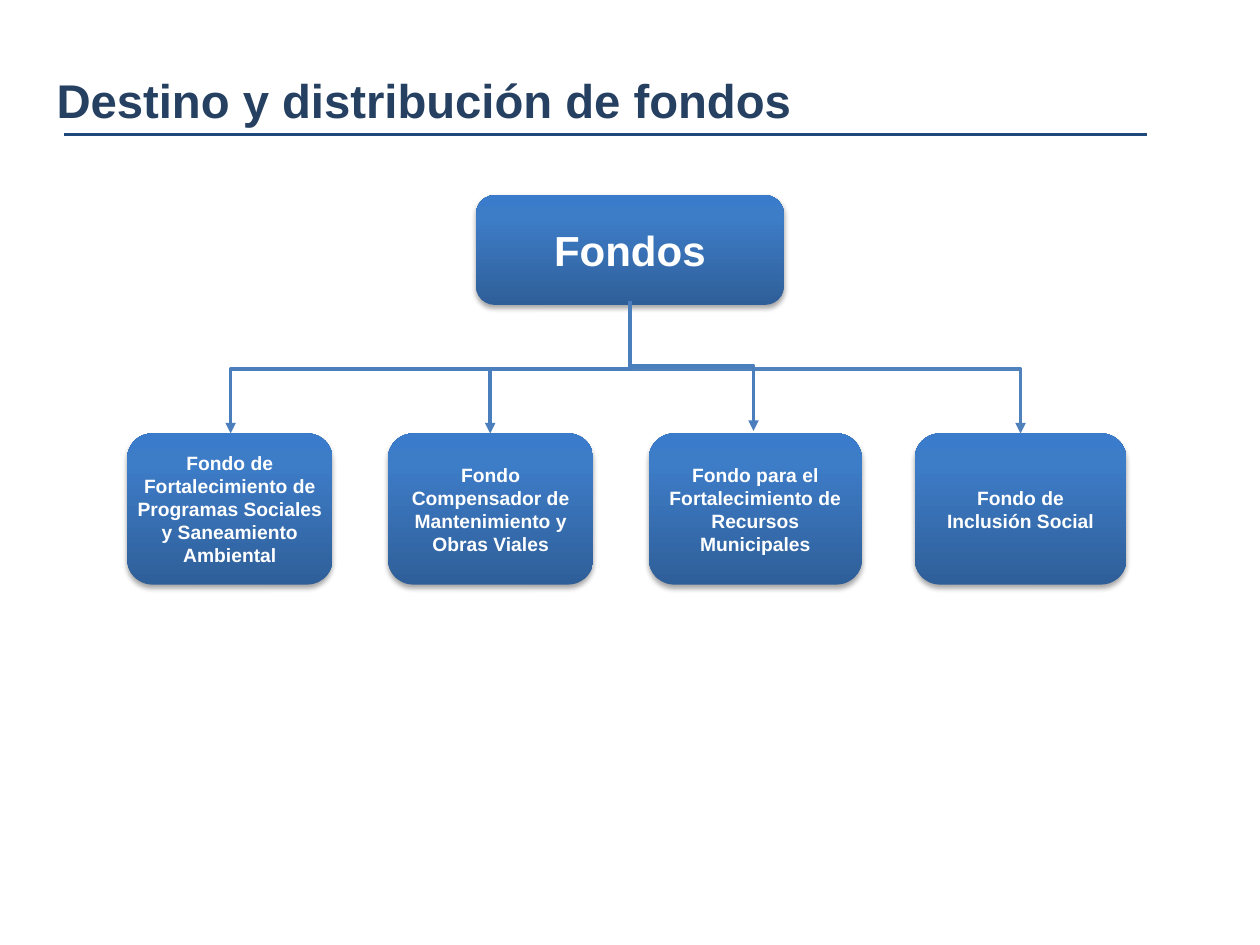
from lxml import etree
from pptx import Presentation
from pptx.dml.color import RGBColor
from pptx.enum.shapes import MSO_CONNECTOR as Link, MSO_SHAPE as Shape
from pptx.enum.text import MSO_ANCHOR as Anchor, MSO_AUTO_SIZE as AutoSize, PP_ALIGN as Align
from pptx.oxml import parse_xml
from pptx.oxml.ns import nsdecls, qn
from pptx.util import Inches, Pt

NAVY, RULE, WHITE = "254061", "1F497D", "FFFFFF"
ARROW, ARROW_LIGHT = "4B7EBC", "4F81BD"
GRADIENT = [(0, "2F5F99"), (80, "3D7CC7"), (100, "3A7CCB")]

ROOT = (3.78, 1.55, 2.44, 0.87)
FUND_TOP, FUND_HEIGHT = 3.44, 1.2
# Text, left, width, side inset
FUNDS = [
    ("Fondo de Fortalecimiento de Programas Sociales y Saneamiento Ambiental", 1.01, 1.63, 0),
    ("Fondo Compensador de Mantenimiento y Obras Viales", 3.08, 1.63, 0.1),
    ("Fondo para el Fortalecimiento de Recursos Municipales", 5.15, 1.69, 0.1),
    ("Fondo de Inclusión Social", 7.26, 1.68, 0.1),
]
# Arrow ends (x, y), start y, colour
ARROWS = [
    (8.1, 3.44, 2.42, ARROW_LIGHT),
    (3.89, 3.44, 2.42, ARROW),
    (5.98, 3.42, 2.39, ARROW),
    (1.83, 3.44, 2.42, ARROW),
]


def color(value):
    return RGBColor.from_string(value)


def write(shape, text, size, fill, align=Align.LEFT, anchor=Anchor.TOP, inset=(0.1, 0.05)):
    frame = shape.text_frame
    frame.word_wrap = True
    frame.vertical_anchor = anchor
    frame.margin_left = frame.margin_right = Inches(inset[0])
    frame.margin_top = frame.margin_bottom = Inches(inset[1])
    para = frame.paragraphs[0]
    para.alignment = align
    span = para.add_run()
    span.text = text
    span.font.name, span.font.size, span.font.bold = "Arial", Pt(size), True
    span.font.color.rgb = color(fill)
    return frame


def add_line(page, kind, start, end, fill, width):
    line = page.shapes.add_connector(kind, *(Inches(v) for v in (*start, *end)))
    line.line.color.rgb = color(fill)
    line.line.width = Pt(width)
    etree.SubElement(line._element.spPr, qn("a:effectLst"))
    return line


def add_title(page, box):
    add_line(page, Link.STRAIGHT, (0.51, 1.07), (9.1, 1.07), RULE, 1.5)
    title = page.shapes.add_textbox(*map(Inches, box))
    frame = write(title, "Destino y distribución de fondos", 27, NAVY)
    frame.auto_size = AutoSize.SHAPE_TO_FIT_TEXT


def add_card(page, box, text, size, inset=(0.1, 0.05)):
    card = page.shapes.add_shape(Shape.ROUNDED_RECTANGLE, *map(Inches, box))
    card.line.fill.background()
    # Three-stop gradient running upwards, then a soft shadow below
    stops = "".join(
        f'<a:gs pos="{pos * 1000}"><a:srgbClr val="{value}"/></a:gs>' for pos, value in GRADIENT
    )
    gradient = parse_xml(
        f'<a:gradFill {nsdecls("a")} rotWithShape="1"><a:gsLst>{stops}</a:gsLst>'
        '<a:lin ang="16200000" scaled="0"/></a:gradFill>'
    )
    shadow = parse_xml(
        f'<a:effectLst {nsdecls("a")}><a:outerShdw blurRad="{Pt(3.1)}" dist="{Pt(1.8)}" '
        'dir="5400000" rotWithShape="0"><a:srgbClr val="000000"><a:alpha val="35000"/>'
        '</a:srgbClr></a:outerShdw></a:effectLst>'
    )
    properties = card._element.spPr
    properties.find(qn("a:prstGeom")).addnext(gradient)
    properties.append(shadow)
    write(card, text, size, WHITE, Align.CENTER, Anchor.MIDDLE, inset)


def add_arrow(page, start, end, fill):
    """Elbow arrow that leaves downwards, turned a quarter to do so."""
    arrow = add_line(page, Link.ELBOW, start, end, fill, 2)
    run, drop = end[0] - start[0], end[1] - start[1]
    arrow.left = Inches((start[0] + end[0] - drop) / 2)
    arrow.top = Inches((start[1] + end[1] - abs(run)) / 2)
    arrow.width, arrow.height = Inches(drop), Inches(abs(run))
    properties = arrow._element.spPr
    frame = properties.find(qn("a:xfrm"))
    frame.attrib.pop("flipH", None)
    frame.set("rot", "16200000" if run > 0 else "5400000")
    if run > 0:
        frame.set("flipH", "1")
    etree.SubElement(properties.find(qn("a:ln")), qn("a:tailEnd"), type="triangle")


def add_fund_tree(page, root):
    add_card(page, root, "Fondos", 24)
    for text, left, width, side in FUNDS:
        inset = (side, side / 2)
        add_card(page, (left, FUND_TOP, width, FUND_HEIGHT), text, 11, inset)
    center = root[0] + root[2] / 2
    for x, y, start_y, fill in ARROWS:
        add_arrow(page, (center, start_y), (x, y), fill)


def main():
    deck = Presentation()
    deck.slide_width, deck.slide_height = Inches(10), Inches(7.5)
    page = deck.slides.add_slide(deck.slide_layouts[6])
    add_title(page, (0.35, 0.52, 8.82, 0.56))
    add_fund_tree(page, ROOT)
    deck.save("out.pptx")


if __name__ == "__main__":
    main()
